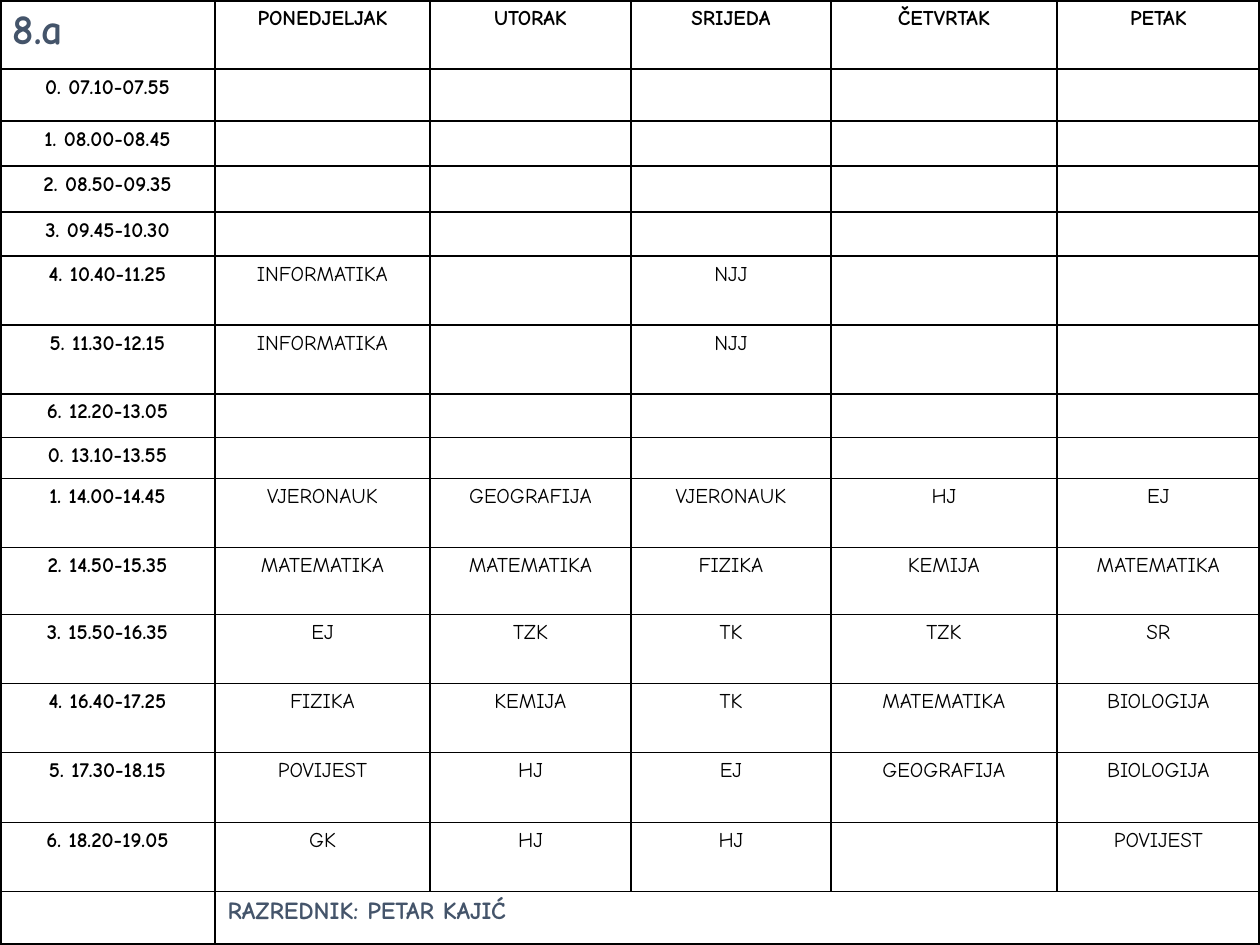
from dataclasses import dataclass

from lxml import etree
from pptx import Presentation
from pptx import util as u
from pptx.dml.color import RGBColor
from pptx.enum import text
from pptx.oxml import ns

EMU_PER_PX = 914400 / 126
WIDTH, HEIGHT = 1260, 945
COLORS = {"ink": "000000", "accent": "44546A"}
FONT = "Comic Neue"
COLUMN_WIDTHS = [215, 215, 201, 200, 226, 203]
THIN, THICK = u.Pt(1), u.Pt(2.25)


@dataclass
class Style:
    size: int
    bold: bool
    color: str = "ink"
    align: text.PP_ALIGN = text.PP_ALIGN.CENTER


@dataclass
class Row:
    height: int
    label: str
    lessons: tuple = ("",) * 5


HEADING = Style(12, True)
LESSON = Style(12, False)
CLASS_NAME = Style(24, True, "accent", text.PP_ALIGN.LEFT)
TEACHER = Style(14, True, "accent", text.PP_ALIGN.LEFT)

ROWS = [
    Row(69, "8.a", ("PONEDJELJAK", "UTORAK", "SRIJEDA", "ČETVRTAK", "PETAK")),
    # Morning shift
    Row(52, "0. 07.10-07.55"),
    Row(45, "1. 08.00-08.45"),
    Row(46, "2. 08.50-09.35"),
    Row(44, "3. 09.45-10.30"),
    Row(69, "4. 10.40-11.25", ("INFORMATIKA", "", "NJJ", "", "")),
    Row(69, "5. 11.30-12.15", ("INFORMATIKA", "", "NJJ", "", "")),
    Row(44, "6. 12.20-13.05"),
    # Afternoon shift
    Row(41, "0. 13.10-13.55"),
    Row(69, "1. 14.00-14.45", ("VJERONAUK", "GEOGRAFIJA", "VJERONAUK", "HJ", "EJ")),
    Row(67, "2. 14.50-15.35", ("MATEMATIKA", "MATEMATIKA", "FIZIKA", "KEMIJA", "MATEMATIKA")),
    Row(69, "3. 15.50-16.35", ("EJ", "TZK", "TK", "TZK", "SR")),
    Row(69, "4. 16.40-17.25", ("FIZIKA", "KEMIJA", "TK", "MATEMATIKA", "BIOLOGIJA")),
    Row(70, "5. 17.30-18.15", ("POVIJEST", "HJ", "EJ", "GEOGRAFIJA", "BIOLOGIJA")),
    Row(69, "6. 18.20-19.05", ("GK", "HJ", "HJ", "", "POVIJEST")),
    # Class teacher
    Row(53, "", ("RAZREDNIK: PETAR KAJIĆ", "", "", "", "")),
]
LAST_ROW, LAST_COLUMN = len(ROWS) - 1, len(COLUMN_WIDTHS) - 1


def px(length: int) -> int:
    return round(length * EMU_PER_PX)


def pick_style(row: int, column: int) -> Style:
    if (row, column) == (0, 0):
        return CLASS_NAME
    if row == LAST_ROW:
        return TEACHER
    return HEADING if row == 0 or column == 0 else LESSON


def write(cell, words: str, style: Style) -> None:
    paragraph = cell.text_frame.paragraphs[0]
    paragraph.alignment = style.align
    if not words:
        # An empty cell still needs a text size so that its row stays low
        end = etree.SubElement(paragraph._p, ns.qn("a:endParaRPr"))
        end.set("sz", str(style.size * 100))
        return
    run = paragraph.add_run()
    run.text = words
    values = {"name": FONT, "size": u.Pt(style.size), "bold": style.bold}
    for name, value in values.items():
        setattr(run.font, name, value)
    run.font.color.rgb = RGBColor.from_string(COLORS[style.color])


def add_borders(cell, sides: dict) -> None:
    properties = cell._tc.get_or_add_tcPr()
    for index, (side, width) in enumerate(sides.items()):
        line = etree.Element(ns.qn(f"a:ln{side}"), w=str(int(width)))
        fill = etree.SubElement(line, ns.qn("a:solidFill"))
        etree.SubElement(fill, ns.qn("a:srgbClr"), val=COLORS["ink"])
        properties.insert(index, line)


def border_sides(cell, row: int, column: int) -> dict:
    end = column + (cell.span_width - 1 if cell.is_merge_origin else 0)
    sides = {
        "L": THICK if column == 0 else THIN,
        "R": THICK if end == LAST_COLUMN else THIN,
        "T": THICK if row == 0 else THIN,
        "B": THICK if row == LAST_ROW else THIN,
    }
    if cell.is_spanned:
        del sides["L"]
        if column < LAST_COLUMN:
            del sides["R"]
    return sides


def add_timetable(slide) -> None:
    shape = slide.shapes.add_table(
        len(ROWS), len(COLUMN_WIDTHS), 0, 0, px(WIDTH), px(HEIGHT))
    table = shape.table
    table.first_row = table.horz_banding = False
    for column, width in zip(table.columns, COLUMN_WIDTHS):
        column.width = px(width)
    table.cell(LAST_ROW, 1).merge(table.cell(LAST_ROW, LAST_COLUMN))

    for row_index, row in enumerate(ROWS):
        table.rows[row_index].height = px(row.height)
        for column_index, words in enumerate((row.label, *row.lessons)):
            cell = table.cell(row_index, column_index)
            cell.fill.background()
            write(cell, words, pick_style(row_index, column_index))
            add_borders(cell, border_sides(cell, row_index, column_index))


def main() -> None:
    presentation = Presentation()
    presentation.slide_width, presentation.slide_height = px(WIDTH), px(HEIGHT)
    slide = presentation.slides.add_slide(presentation.slide_layouts[6])
    add_timetable(slide)
    presentation.save("out.pptx")


if __name__ == "__main__":
    main()
